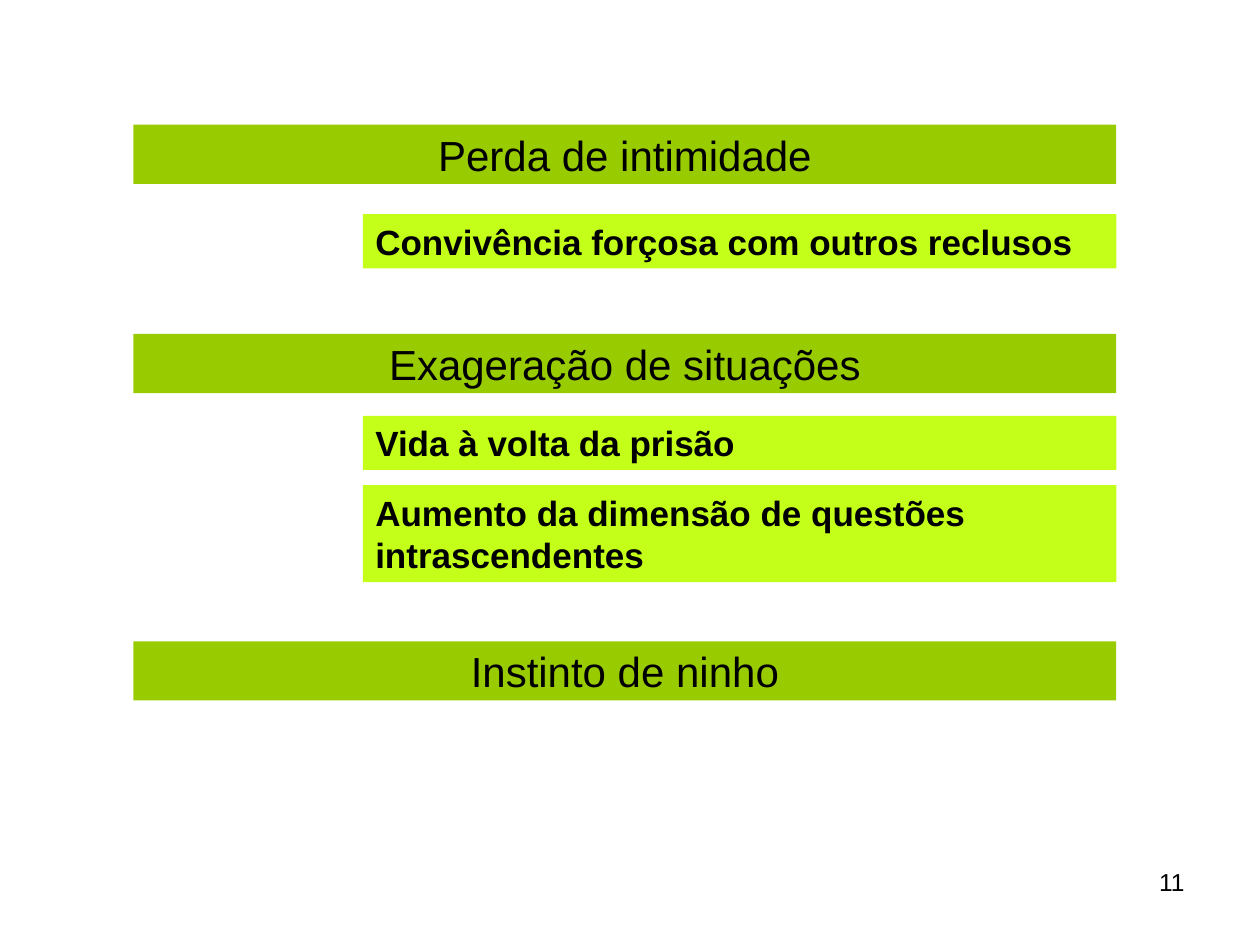
from pptx import Presentation
from pptx.dml.color import RGBColor
from pptx.enum.shapes import MSO_SHAPE
from pptx.enum.text import MSO_ANCHOR, PP_ALIGN
from pptx.util import Inches, Pt

RECTANGLE = MSO_SHAPE.RECTANGLE
TOP, MIDDLE = MSO_ANCHOR.TOP, MSO_ANCHOR.MIDDLE
LEFT, CENTER, RIGHT = PP_ALIGN.LEFT, PP_ALIGN.CENTER, PP_ALIGN.RIGHT

HEADING_LEFT, DETAIL_LEFT, RIGHT_EDGE = 1.06, 2.88, 8.86
HEADING_HEIGHT = 0.47
SECTIONS = [
    (0.99, "Perda de intimidade",
     [(1.7, 0.43, "Convivência forçosa com outros reclusos")]),
    (2.65, "Exageração de situações",
     [(3.3, 0.43, "Vida à volta da prisão"),
      (3.85, 0.77, "Aumento da dimensão de questões intrascendentes")]),
    (5.09, "Instinto de ninho", []),
]


def color(value):
    """Turn a hex string into a colour."""
    return RGBColor.from_string(value)


def write_text(shape, text, size, align, anchor=TOP, bold=False, wrap=True):
    """Put one formatted paragraph into a shape."""
    frame = shape.text_frame
    frame.text = text
    frame.word_wrap = wrap
    frame.vertical_anchor = anchor
    para = frame.paragraphs[0]
    para.alignment = align
    font = para.runs[0].font
    font.name = "Arial"
    font.size = Pt(size)
    font.bold = bold
    font.color.rgb = color("000000")


def add_bar(page, left, top, height, fill):
    """Add a plain bar that reaches the common right edge."""
    bar = page.shapes.add_shape(RECTANGLE, Inches(left), Inches(top),
                                Inches(RIGHT_EDGE - left), Inches(height))
    bar.shadow.inherit = False
    bar.fill.solid()
    bar.fill.fore_color.rgb = color(fill)
    bar.line.fill.background()
    return bar


def add_section(page, top, heading, details):
    """Add a heading bar and the indented detail bars below it."""
    bar = add_bar(page, HEADING_LEFT, top, HEADING_HEIGHT, "99CC00")
    write_text(bar, heading, 24, CENTER, MIDDLE, wrap=False)
    for detail_top, height, text in details:
        bar = add_bar(page, DETAIL_LEFT, detail_top, height, "C3FF19")
        write_text(bar, text, 20, LEFT, bold=True)


def add_page_number(page, left, top, width, height, number):
    """Add the right-aligned page number."""
    box = page.shapes.add_textbox(Inches(left), Inches(top),
                                  Inches(width), Inches(height))
    write_text(box, number, 14, RIGHT)


def main():
    """Build the deck and save it."""
    deck = Presentation()
    deck.slide_width, deck.slide_height = Inches(10), Inches(7.5)
    page = deck.slides.add_slide(deck.slide_layouts[6])
    for section in SECTIONS:
        add_section(page, *section)
    add_page_number(page, 7.17, 6.83, 2.33, 0.52, "11")
    deck.save("out.pptx")


if __name__ == "__main__":
    main()
